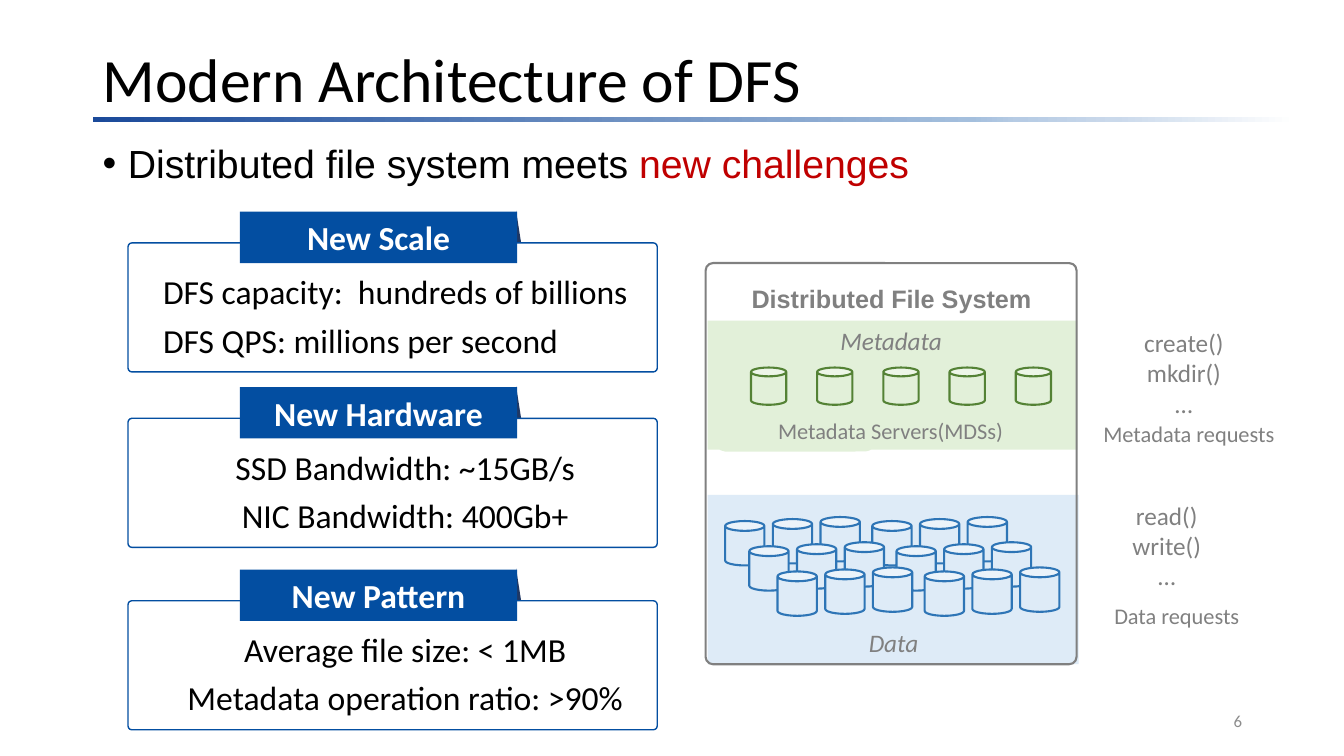
from lxml import etree
from pptx import Presentation
from pptx import util as u
from pptx.dml.color import RGBColor
from pptx.enum import shapes, text
from pptx.oxml import ns

deck = Presentation()
deck.slide_width = u.Inches(13.333)
deck.slide_height = u.Inches(7.5)
page = deck.slides.add_slide(deck.slide_layouts[6])
cell = deck.slide_width / 40

hues = {
    "ink": "000000", "white": "FFFFFF", "red": "C00000", "gray": "808080",
    "pale": "8C8C8C", "navy": "034EA1", "fold": "203864", "mint": "E2F0D9",
    "green": "548235", "sky": "DEEBF7", "blue": "2E75B6",
}
kind = shapes.MSO_SHAPE
mid = text.PP_ALIGN.CENTER


def draw(form, x, y, w, h, fill=None, line=None, wide=1.5, bend=None):
    part = page.shapes.add_shape(form, *[round(n * cell) for n in (x, y, w, h)])
    part.shadow.inherit = False
    if bend is not None:
        part.adjustments[0] = bend
    if fill:
        part.fill.solid()
        part.fill.fore_color.rgb = RGBColor.from_string(hues[fill])
    else:
        part.fill.background()
    if line:
        part.line.color.rgb = RGBColor.from_string(hues[line])
        part.line.width = u.Pt(wide)
    else:
        part.line.fill.background()
    return part


def write(x, y, w, h, lines, size, hue="gray", face="Calibri", align=mid,
          bold=False, slant=False, lead=None, center=False):
    box = page.shapes.add_textbox(*[round(n * cell) for n in (x, y, w, h)])
    frame = box.text_frame
    frame.word_wrap = True
    frame.vertical_anchor = text.MSO_ANCHOR.MIDDLE if center else text.MSO_ANCHOR.TOP
    for i, runs in enumerate(lines):
        para = frame.add_paragraph() if i else frame.paragraphs[0]
        para.alignment = align
        para.line_spacing = lead
        for words, tint in [(runs, hue)] if isinstance(runs, str) else runs:
            run = para.add_run()
            run.text = words
            run.font.name = face
            run.font.size = u.Pt(size)
            run.font.bold = bold
            run.font.italic = slant
            run.font.color.rgb = RGBColor.from_string(hues[tint])
    return box


left, right = text.PP_ALIGN.LEFT, text.PP_ALIGN.RIGHT

rule = draw(kind.RECTANGLE, 2.76, 3.48, 35.79, 0.15, "navy")
rule.fill.gradient()
rule.fill.gradient_angle = 0
stops = next(rule.element.iter(ns.qn("a:gsLst")))
for old in list(stops):
    stops.remove(old)
for pos, tint in [(0, "1B4A9A"), (73, "A4BFDD"), (77, "B6CBE4"),
                  (85, "CAD9EB"), (100, "FFFFFF")]:
    stop = etree.SubElement(stops, ns.qn("a:gs"), pos=str(pos * 1000))
    etree.SubElement(stop, ns.qn("a:srgbClr"), val=tint)

write(2.76, 0.69, 34.5, 3.54, ["Modern Architecture of DFS"], 44, "ink",
      align=left, lead=0.9, center=True)
lead = write(2.76, 3.99, 35.37, 2.61,
             [[("Distributed file system meets ", "ink"), ("new challenges", "red")]],
             28, face="Arial", align=left)
props = lead.text_frame.paragraphs[0]._p.get_or_add_pPr()
props.set("marL", str(u.Inches(0.25)))
props.set("indent", str(-u.Inches(0.25)))
etree.SubElement(props, ns.qn("a:buFont"), typeface="Arial")
etree.SubElement(props, ns.qn("a:buChar"), char="•")
write(34.11, 20.85, 3.15, 1.2, ["6"], 12, "pale", align=right, center=True)

cards = [
    (6.3, "New Scale", left,
     ["DFS capacity:  hundreds of billions", "DFS QPS: millions per second"]),
    (11.52, "New Hardware", mid,
     ["SSD Bandwidth: ~15GB/s", "NIC Bandwidth: 400Gb+"]),
    (16.95, "New Pattern", mid,
     ["Average file size: < 1MB", "Metadata operation ratio: >90%"]),
]
for top, name, align, facts in cards:
    draw(kind.RIGHT_TRIANGLE, 15.36, top - 0.03, 0.24, 1.53, "fold")
    draw(kind.ROUNDED_RECTANGLE, 3.81, top + 0.93, 15.75, 3.84, "white", "navy", 1, 0.03)
    draw(kind.RECTANGLE, 7.14, top, 8.25, 1.53, "navy")
    write(7.14, top, 8.25, 1.53, [name], 24, "white", bold=True, center=True)
    write(4.56, top + 1.38, 15, 3.24, facts, 24, "ink", align=align, lead=1.2)

write(21, 8.43, 11.07, 0.93, ["Distributed File System"], 18, face="Arial",
      bold=True, center=True)
draw(kind.RECTANGLE, 21.06, 14.73, 11.04, 5.04, "sky")
draw(kind.ROUNDED_RECTANGLE, 21.33, 10.92, 4.68, 2.52, "mint", bend=0.1)
draw(kind.RECTANGLE, 21.06, 9.54, 11.01, 3.84, "mint")
draw(kind.ROUNDED_RECTANGLE, 21, 7.83, 11.04, 11.94, None, "gray", bend=0.02)

for i in range(5):
    draw(kind.CAN, 22.35 + 1.97 * i, 10.94, 1.05, 1.11, "mint", "green")
for edge in (28.8, 24.42):
    for col in range(3):
        for row, shift in enumerate((0, 0.72, 1.56)):
            draw(kind.CAN, edge - 1.42 * col + shift, 15.39 + 0.06 * col + 0.75 * row,
                 1.17, 1.32, "sky", "blue")

write(21, 9.54, 11.04, 1.2, ["Metadata"], 18, slant=True)
write(21.06, 18.51, 11.07, 1.2, ["Data"], 18, slant=True)
write(21, 12.27, 11.01, 1.11, ["Metadata Servers(MDSs)"], 16)
calls = [
    (33.42, 9.6, ["create()", "mkdir()", "…"], 32.49, 12.36, "Metadata requests"),
    (32.91, 14.73, ["read()", "write()", "…"], 32.13, 17.76, "Data requests"),
]
for x, y, names, tagx, tagy, tag in calls:
    write(x, y, 3.63, 3.03, names, 18)
    write(tagx, tagy, 5.79, 1.11, [tag], 16)

deck.save("out.pptx")
